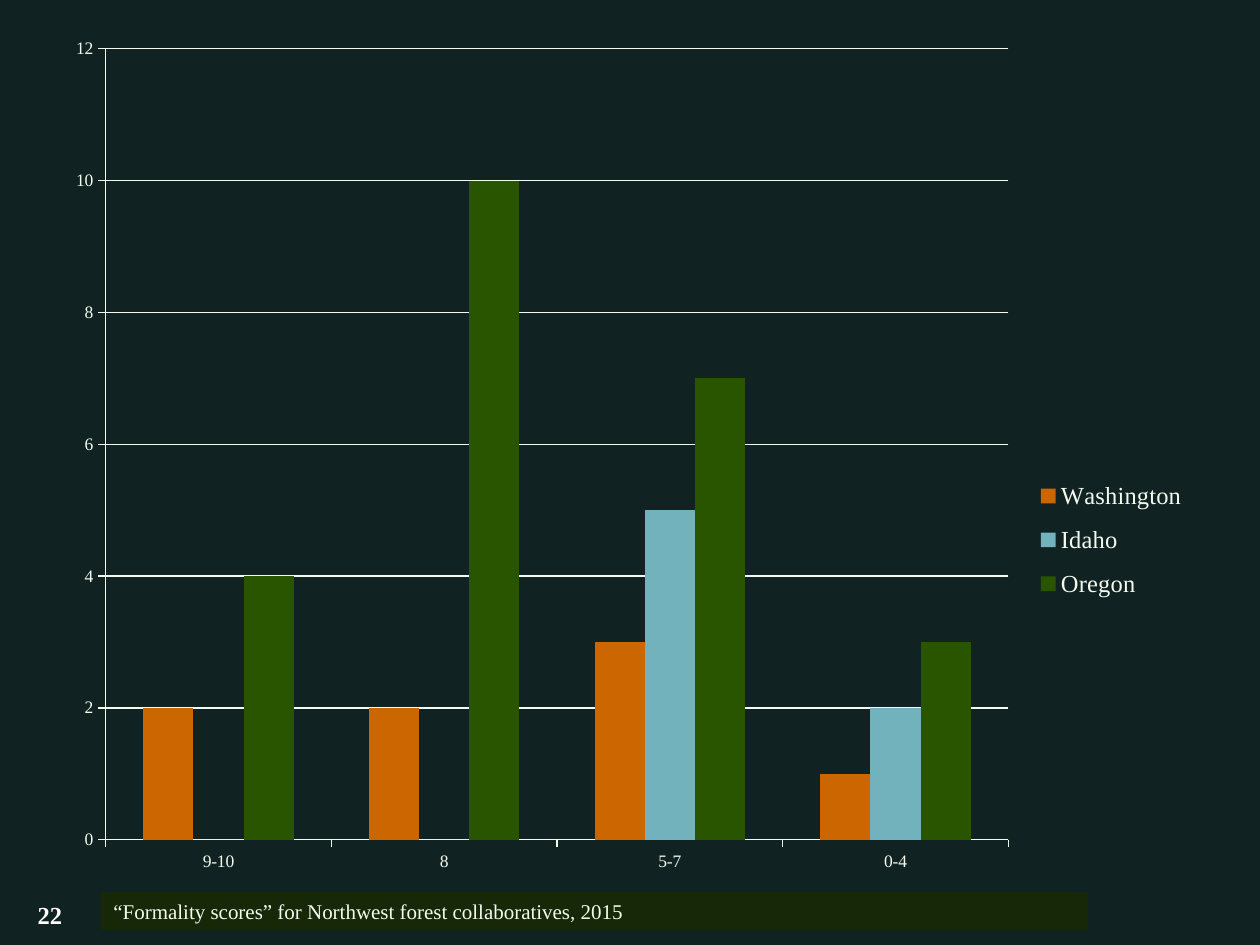
from lxml import etree
from pptx import Presentation
from pptx import util as u
from pptx.chart.data import CategoryChartData
from pptx.dml.color import RGBColor
from pptx.enum import chart as ch, shapes, text
from pptx.oxml import parse_xml
from pptx.oxml.ns import nsdecls

NIGHT, MOSS, PALE, WHITE = "112222", "172809", "F4FBEE", "FFFFFF"


def colour(hex_string):
    return RGBColor.from_string(hex_string)


class Deck:
    """Style and current slide; lengths are shares of the slide's size."""
    font = "Times New Roman"

    def __init__(self, width, height):
        self.prs = Presentation()
        self.prs.slide_width, self.prs.slide_height = u.Inches(width), u.Inches(height)
        self.width, self.height = width, height
        self.slide = self.prs.slides.add_slide(self.prs.slide_layouts[5])

    def place(self, x, y, w, h):
        return [u.Inches(round(share * size, 2)) for share, size in
                zip((x, y, w, h), (self.width, self.height) * 2)]

    def style(self, font, size, hex_string, bold=False):
        font.name, font.size, font.bold = self.font, u.Pt(size), bold
        font.color.rgb = colour(hex_string)

    def panel(self, box, fill):
        panel = self.slide.shapes.add_shape(shapes.MSO_SHAPE.RECTANGLE, *self.place(*box))
        panel.shadow.inherit = False
        panel.fill.solid()
        panel.fill.fore_color.rgb = colour(fill)
        panel.line.fill.background()

    def set_words(self, shape, words, size, hex_string, bold=False):
        frame = shape.text_frame
        frame.text = words
        frame.word_wrap = True
        frame.auto_size = text.MSO_AUTO_SIZE.NONE
        frame.vertical_anchor = text.MSO_ANCHOR.MIDDLE
        frame.margin_top = frame.margin_bottom = u.Inches(0.05)
        paragraph = frame.paragraphs[0]
        paragraph.alignment = text.PP_ALIGN.LEFT
        self.style(paragraph.font, size, hex_string, bold)

    def label(self, box, words, size, hex_string, bold=False):
        self.set_words(self.slide.shapes.add_textbox(*self.place(*box)),
                       words, size, hex_string, bold)

    def title(self, box, words, size, hex_string, fill):
        title = self.slide.shapes.title
        title.left, title.top, title.width, title.height = self.place(*box)
        title.fill.solid()
        title.fill.fore_color.rgb = colour(fill)
        self.set_words(title, words, size, hex_string)
        self.slide.shapes._spTree.append(title._element)  # bring to front

    def columns(self, box, categories, series):
        data = CategoryChartData()
        data.categories = categories
        for name, values, _ in series:
            data.add_series(name, values)
        chart = self.slide.shapes.add_chart(
            ch.XL_CHART_TYPE.COLUMN_CLUSTERED, *self.place(*box), data).chart
        chart.has_title = False
        self.style(chart.font, 10, PALE)

        # Columns
        plot = chart.plots[0]
        plot.gap_width, plot.overlap, plot.vary_by_categories = 150, 0, False
        for column, (_, _, fill) in zip(plot.series, series):
            column.format.fill.solid()
            column.format.fill.fore_color.rgb = colour(fill)

        # Axes and gridlines
        scores, counts = chart.category_axis, chart.value_axis
        counts.minimum_scale, counts.maximum_scale, counts.major_unit = 0, 12, 2
        counts.has_major_gridlines = True
        for axis in (scores, counts):
            axis.major_tick_mark = ch.XL_TICK_MARK.OUTSIDE
        for ruled in (scores, counts, counts.major_gridlines):
            ruled.format.line.color.rgb = colour(PALE)
            ruled.format.line.width = u.Pt(0.75)

        # Legend
        chart.has_legend = True
        legend = chart.legend
        legend.position = ch.XL_LEGEND_POSITION.RIGHT
        legend.include_in_layout = False
        self.style(legend.font, 14, PALE)
        self.fix_layout(chart._chartSpace.chart.plotArea, (0.045, 0.03, 0.79, 0.91), True)
        self.fix_layout(legend._element, (0.85, 0.51, 0.15, 0.17))

    def fix_layout(self, part, shares, inner=False):
        """Place a chart part by shares of the chart's size."""
        for old in part.findall("{*}layout"):
            part.remove(old)
        layout = parse_xml(f"<c:layout {nsdecls('c')}><c:manualLayout/></c:layout>")
        settings = [("layoutTarget", "inner")] if inner else []
        settings += [("xMode", "edge"), ("yMode", "edge"), *zip("xywh", shares)]
        namespace = etree.QName(layout).namespace
        for tag, value in settings:
            etree.SubElement(layout[0], f"{{{namespace}}}{tag}", val=str(value))
        before = part.find("{*}legendPos")
        part.insert(0 if before is None else part.index(before) + 1, layout)


def main():
    deck = Deck(10, 7.5)

    # Dark background
    deck.panel((0, 0, 1, 0.05), NIGHT)
    deck.panel((0, 0.027, 1, 0.973), NIGHT)

    # Slide number
    deck.label((0.02, 0.944, 0.06, 0.048), "22", 14, WHITE, bold=True)

    # Scores by state
    deck.columns((0.043, 0.024, 0.907, 0.92), ["9-10", "8", "5-7", "0-4"], [
        ("Washington", (2, 2, 3, 1), "CC6600"),
        ("Idaho", (0, 0, 5, 2), "71B2BC"),
        ("Oregon", (4, 10, 7, 3), "2A5500"),
    ])

    # Caption
    deck.title((0.08, 0.944, 0.783, 0.04),
               "“Formality scores” for Northwest forest collaboratives, 2015",
               12, PALE, MOSS)
    deck.prs.save("out.pptx")


if __name__ == "__main__":
    main()
